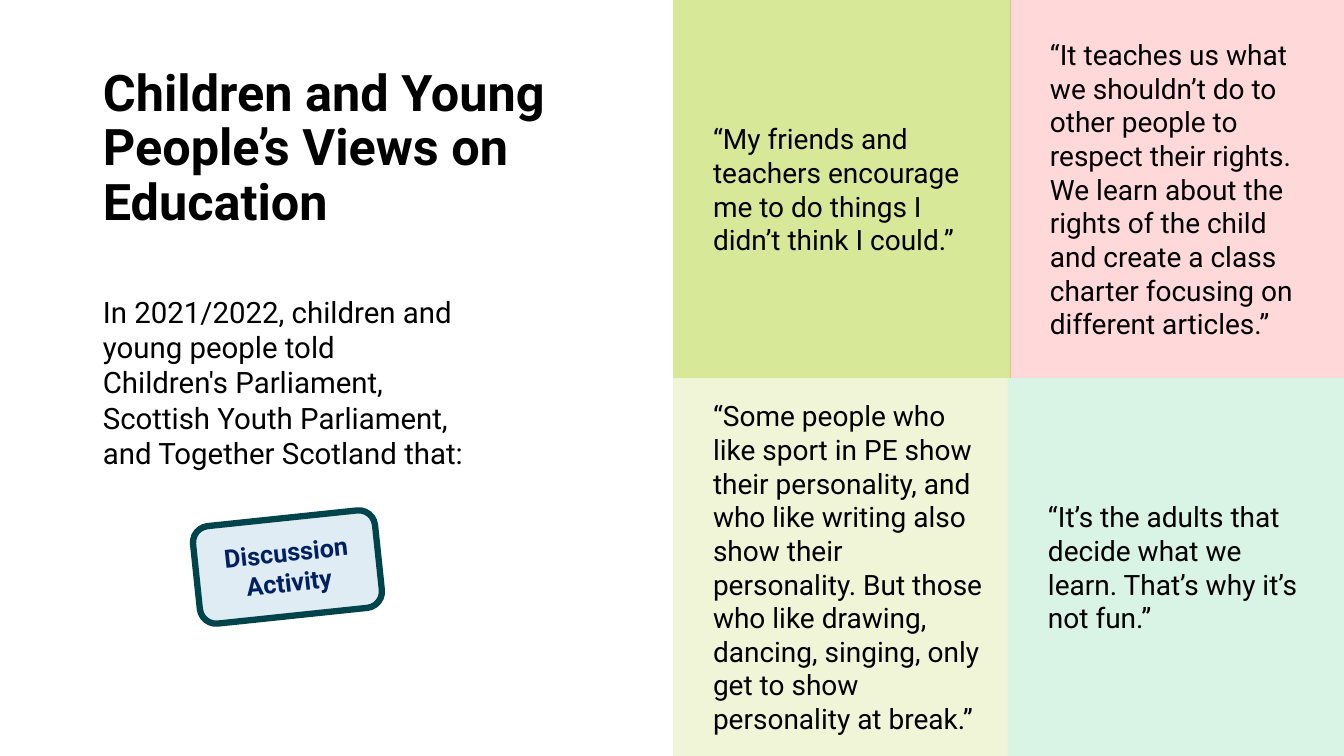
"""Build a slide of children's and young people's views on education."""
from lxml import etree
from pptx import Presentation, util as u
from pptx.dml.color import RGBColor
from pptx.enum import shapes, text
from pptx.oxml.ns import qn

THEME = {
    "font": "Roboto",
    "ink": "000000", "badge_ink": "002060", "badge_fill": "E0ECF4", "badge_line": "00444B",
    "lime": "B2D235", "green": "00B050", "cream": "E0EDAE", "red": "FF0000",
    "title": 36, "intro": 21, "quote": 20, "badge": 18,
}


def px(n):
    return u.Emu(round(n * 914400 / 100.8))


def write(shape, words, size, ink="ink", bold=False, anchor=text.MSO_ANCHOR.TOP,
          align=text.PP_ALIGN.LEFT, spacing=1.0):
    frame = shape.text_frame
    frame.text = words
    frame.word_wrap = True
    frame.vertical_anchor = anchor
    paragraph = frame.paragraphs[0]
    paragraph.alignment = align
    paragraph.line_spacing = spacing
    font = paragraph.runs[0].font
    font.name = THEME["font"]
    font.size = u.Pt(THEME[size])
    font.bold = bold
    font.color.rgb = RGBColor.from_string(THEME[ink])
    return frame


deck = Presentation()
deck.slide_width, deck.slide_height = px(1344), px(756)
slide = deck.slides.add_slide(deck.slide_layouts[6])

title = slide.shapes.add_textbox(px(93), px(63), px(489), px(123))
write(title, "Children and Young People’s Views on Education", "title", bold=True, spacing=0.9)

intro = slide.shapes.add_textbox(px(93), px(289), px(382), px(403))
write(intro, "In 2021/2022, children and young people told Children's Parliament, "
             "Scottish Youth Parliament, and Together Scotland that:", "intro")

quotes = [
    (673, 0, 338, 40, "lime", 50,
     "“My friends and teachers encourage me to do things I didn’t think I could.”"),
    (1008, 378, 336, 40, "green", 15,
     "“It’s the adults that decide what we learn. That’s why it’s not fun.”"),
    (673, 378, 335, 20, "cream", 50,
     "“Some people who like sport in PE show their personality, and who like writing "
     "also show their personality. But those who like drawing, dancing, singing, "
     "only get to show personality at break.”"),
    (1010, 0, 334, 40, "red", 15,
     "“It teaches us what we shouldn’t do to other people to respect their rights. "
     "We learn about the rights of the child and create a class charter focusing on "
     "different articles.”"),
]
for left, top, width, right_inset, tint, opacity, words in quotes:
    panel = slide.shapes.add_shape(shapes.MSO_SHAPE.RECTANGLE, px(left), px(top), px(width), px(378))
    panel.shadow.inherit = False
    panel.fill.solid()
    panel.fill.fore_color.rgb = RGBColor.from_string(THEME[tint])
    colour = panel.fill._xPr.find(qn("a:solidFill"))[0]
    etree.SubElement(colour, qn("a:alpha"), val=str(opacity * 1000))
    panel.line.fill.background()
    frame = write(panel, words, "quote", anchor=text.MSO_ANCHOR.MIDDLE)
    frame.margin_left = frame.margin_top = frame.margin_bottom = px(40)
    frame.margin_right = px(right_inset)

badge = slide.shapes.add_shape(shapes.MSO_SHAPE.ROUNDED_RECTANGLE, px(196), px(518), px(183), px(98))
badge.rotation = 354
badge.shadow.inherit = False
badge.fill.solid()
badge.fill.fore_color.rgb = RGBColor.from_string(THEME["badge_fill"])
badge.line.color.rgb = RGBColor.from_string(THEME["badge_line"])
badge.line.width = u.Pt(4.5)
write(badge, "Discussion Activity", "badge", "badge_ink", bold=True,
      anchor=text.MSO_ANCHOR.MIDDLE, align=text.PP_ALIGN.CENTER)

deck.save("out.pptx")
